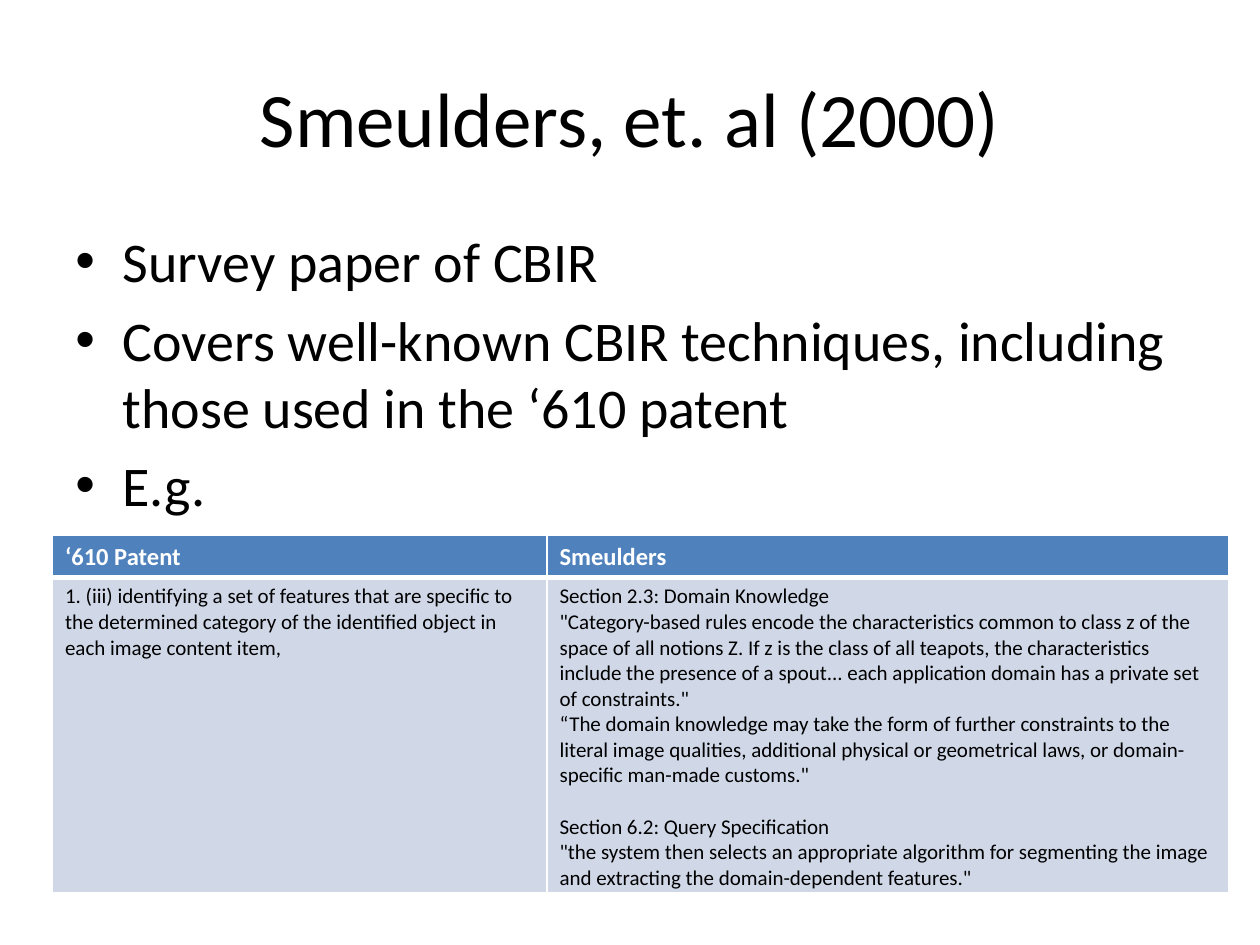
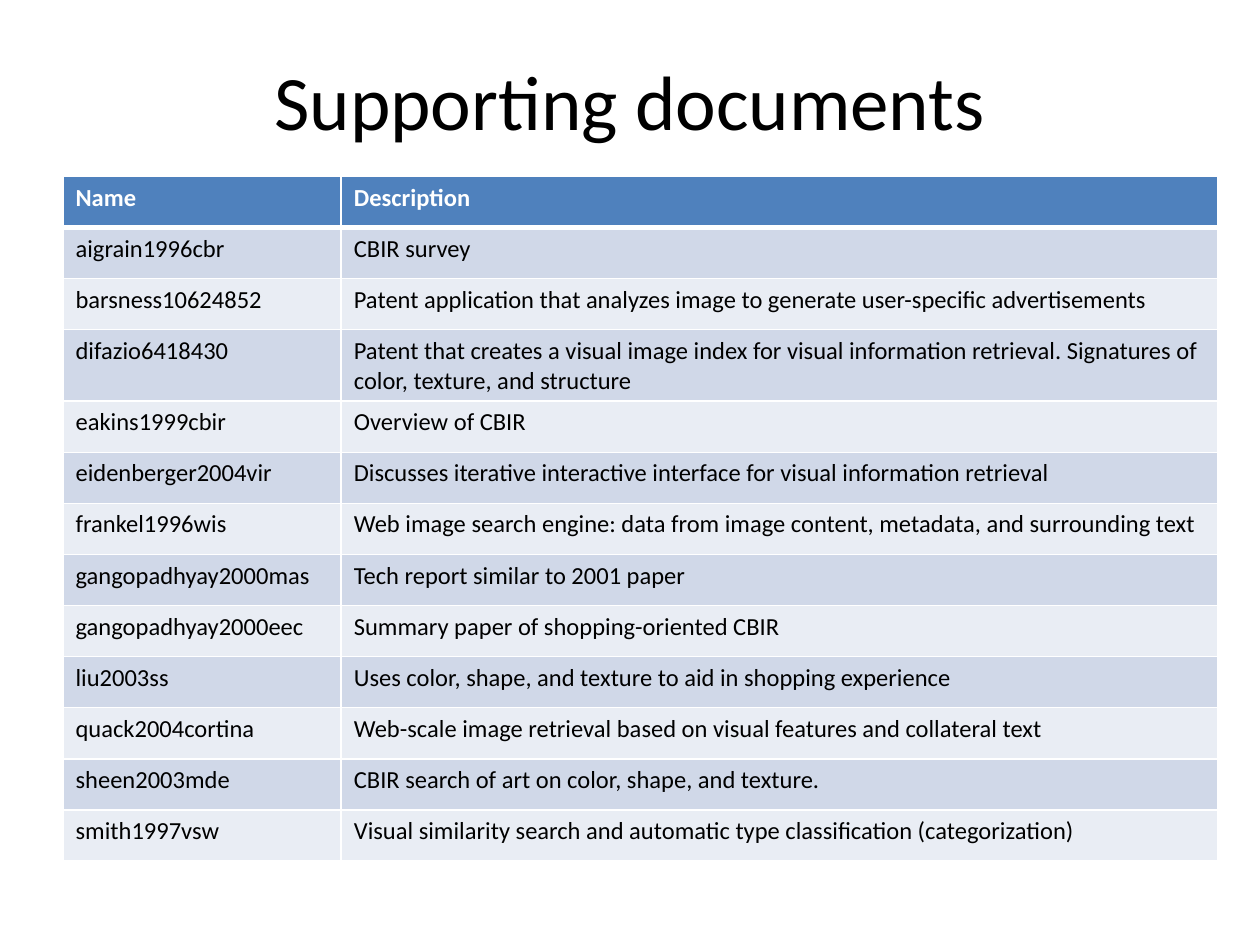
from dataclasses import dataclass

from lxml.etree import SubElement
from pptx import Presentation
from pptx.dml.color import RGBColor
from pptx.enum.text import MSO_ANCHOR as Anchor, PP_ALIGN as Align
from pptx.oxml.ns import qn
from pptx.util import Emu, Inches, Pt

# Shared look
FONT = "Calibri"
BLACK, WHITE = "000000", "FFFFFF"
HEADER_FILL = "4F81BD"
BAND_FILLS = ("D0D8E8", "E9EDF4")
THIN, THICK = 1, 3
TITLE_SIZE, BULLET_SIZE, HEADER_SIZE = 44, 32, 14

# The page is a grid of square units, twelve to the inch
COLUMNS, ROWS = 120, 90
BULLET_INDENT = 4.5


@dataclass(frozen=True)
class Area:
    left: float
    top: float
    width: float
    height: float


@dataclass(frozen=True)
class Entry:
    """One paragraph of a cell, with the space above it in points."""
    text: str
    space_before: float = 0


@dataclass(frozen=True)
class TableSpec:
    left: float
    top: float
    columns: tuple[float, ...]
    rows: tuple[float, ...]
    body_size: float
    cells: list[tuple]


def units(count: float) -> Emu:
    return Inches(count / 12)


def color(hex_value: str) -> RGBColor:
    return RGBColor.from_string(hex_value)


def write(frame, text: str, *, size: float, ink: str = BLACK, bold: bool = False,
          align=Align.LEFT, space_before: float = 0, bullet: bool = False,
          first: bool = False) -> None:
    para = frame.paragraphs[0] if first else frame.add_paragraph()
    para.alignment = align
    para.space_before = Pt(space_before)
    if bullet:
        properties = para._p.get_or_add_pPr()
        properties.set("marL", str(units(BULLET_INDENT)))
        properties.set("indent", str(-units(BULLET_INDENT)))
        SubElement(properties, qn("a:buFont"), typeface="Arial")
        SubElement(properties, qn("a:buChar"), char="•")
    span = para.add_run()
    span.text = text
    span.font.name = FONT
    span.font.size = Pt(size)
    span.font.bold = bold
    span.font.color.rgb = color(ink)


def add_text_frame(page, area: Area, anchor=Anchor.TOP):
    box = page.shapes.add_textbox(units(area.left), units(area.top),
                                  units(area.width), units(area.height))
    box.text_frame.word_wrap = True
    box.text_frame.vertical_anchor = anchor
    return box.text_frame


def add_title(page, text: str, top: float) -> None:
    frame = add_text_frame(page, Area(6, top, COLUMNS - 12, 15), Anchor.MIDDLE)
    write(frame, text, size=TITLE_SIZE, align=Align.CENTER, first=True)


def add_bullets(page, lines: list[str], area: Area) -> None:
    frame = add_text_frame(page, area)
    for index, line in enumerate(lines):
        write(frame, line, size=BULLET_SIZE, bullet=True, first=index == 0,
              space_before=BULLET_SIZE * 0.2)


def set_borders(cell, top: float, bottom: float) -> None:
    properties = cell._tc.get_or_add_tcPr()
    sides = {"a:lnL": THIN, "a:lnR": THIN, "a:lnT": top, "a:lnB": bottom}
    for tag, width in sides.items():
        line = SubElement(properties, qn(tag), w=str(Pt(width)))
        fill = SubElement(line, qn("a:solidFill"))
        SubElement(fill, qn("a:srgbClr"), val=WHITE)


def add_table(page, spec: TableSpec) -> None:
    table = page.shapes.add_table(
        len(spec.rows), len(spec.columns), units(spec.left), units(spec.top),
        units(sum(spec.columns)), units(sum(spec.rows))).table
    for column, width in zip(table.columns, spec.columns):
        column.width = units(width)
    for row, height in zip(table.rows, spec.rows):
        row.height = units(height)
    for row_index, contents in enumerate(spec.cells):
        header = row_index == 0
        for column_index, content in enumerate(contents):
            cell = table.cell(row_index, column_index)
            # The thick rule lies between the header and the first body row
            set_borders(cell, top=THICK if row_index == 1 else THIN,
                        bottom=THICK if header else THIN)
            cell.fill.solid()
            cell.fill.fore_color.rgb = color(
                HEADER_FILL if header else BAND_FILLS[(row_index - 1) % 2])
            entries = [Entry(content)] if isinstance(content, str) else content
            for index, entry in enumerate(entries):
                write(cell.text_frame, entry.text, first=index == 0,
                      size=HEADER_SIZE if header else spec.body_size,
                      ink=WHITE if header else BLACK, bold=header,
                      space_before=entry.space_before)


# Survey paper slide
SURVEY_POINTS = [
    "Survey paper of CBIR",
    "Covers well-known CBIR techniques, including those used in the ‘610 patent",
    "E.g.",
]
SMEULDERS_QUOTES = [
    Entry("Section 2.3: Domain Knowledge"),
    Entry('"Category-based rules encode the characteristics common to class z of the '
          "space of all notions Z. If z is the class of all teapots, the characteristics "
          "include the presence of a spout... each application domain has a private set "
          'of constraints."'),
    Entry("“The domain knowledge may take the form of further constraints to the literal "
          "image qualities, additional physical or geometrical laws, or domain-specific "
          'man-made customs."'),
    Entry("Section 6.2: Query Specification", space_before=14.6),
    Entry('"the system then selects an appropriate algorithm for segmenting the image '
          'and extracting the domain-dependent features."'),
]
CLAIM_TABLE = TableSpec(
    left=5, top=51, columns=(47.1, 64.9), rows=(4, 27), body_size=12,
    cells=[
        ("‘610 Patent", "Smeulders"),
        ("1. (iii) identifying a set of features that are specific to the determined "
         "category of the identified object in each image content item,",
         SMEULDERS_QUOTES),
    ])

# Supporting documents slide
DOCUMENTS = [
    ("Name", "Description"),
    ("aigrain1996cbr", "CBIR survey"),
    ("barsness10624852",
     "Patent application that analyzes image to generate user-specific advertisements"),
    ("difazio6418430",
     "Patent that creates a visual image index for visual information retrieval. "
     "Signatures of color, texture, and structure"),
    ("eakins1999cbir", "Overview of CBIR"),
    ("eidenberger2004vir",
     "Discusses iterative interactive interface for visual information retrieval"),
    ("frankel1996wis",
     "Web image search engine: data from image content, metadata, and surrounding text"),
    ("gangopadhyay2000mas", "Tech report similar to 2001 paper"),
    ("gangopadhyay2000eec", "Summary paper of shopping-oriented CBIR"),
    ("liu2003ss", "Uses color, shape, and texture to aid in shopping experience"),
    ("quack2004cortina",
     "Web-scale image retrieval based on visual features and collateral text"),
    ("sheen2003mde", "CBIR search of art on color, shape, and texture."),
    ("smith1997vsw",
     "Visual similarity search and automatic type classification (categorization)"),
]
DOCUMENT_TABLE = TableSpec(
    left=6, top=16.8, columns=(26.5, 83.5), rows=(4.87,) * len(DOCUMENTS),
    body_size=14, cells=DOCUMENTS)


def main() -> None:
    deck = Presentation()
    deck.slide_width, deck.slide_height = units(COLUMNS), units(ROWS)
    blank = deck.slide_layouts[6]

    survey = deck.slides.add_slide(blank)
    add_title(survey, "Smeulders, et. al (2000)", top=3.6)
    add_bullets(survey, SURVEY_POINTS, Area(6, 21, COLUMNS - 12, 59.4))
    add_table(survey, CLAIM_TABLE)

    documents = deck.slides.add_slide(blank)
    add_title(documents, "Supporting documents", top=2)
    add_table(documents, DOCUMENT_TABLE)

    deck.save("out.pptx")


if __name__ == "__main__":
    main()
